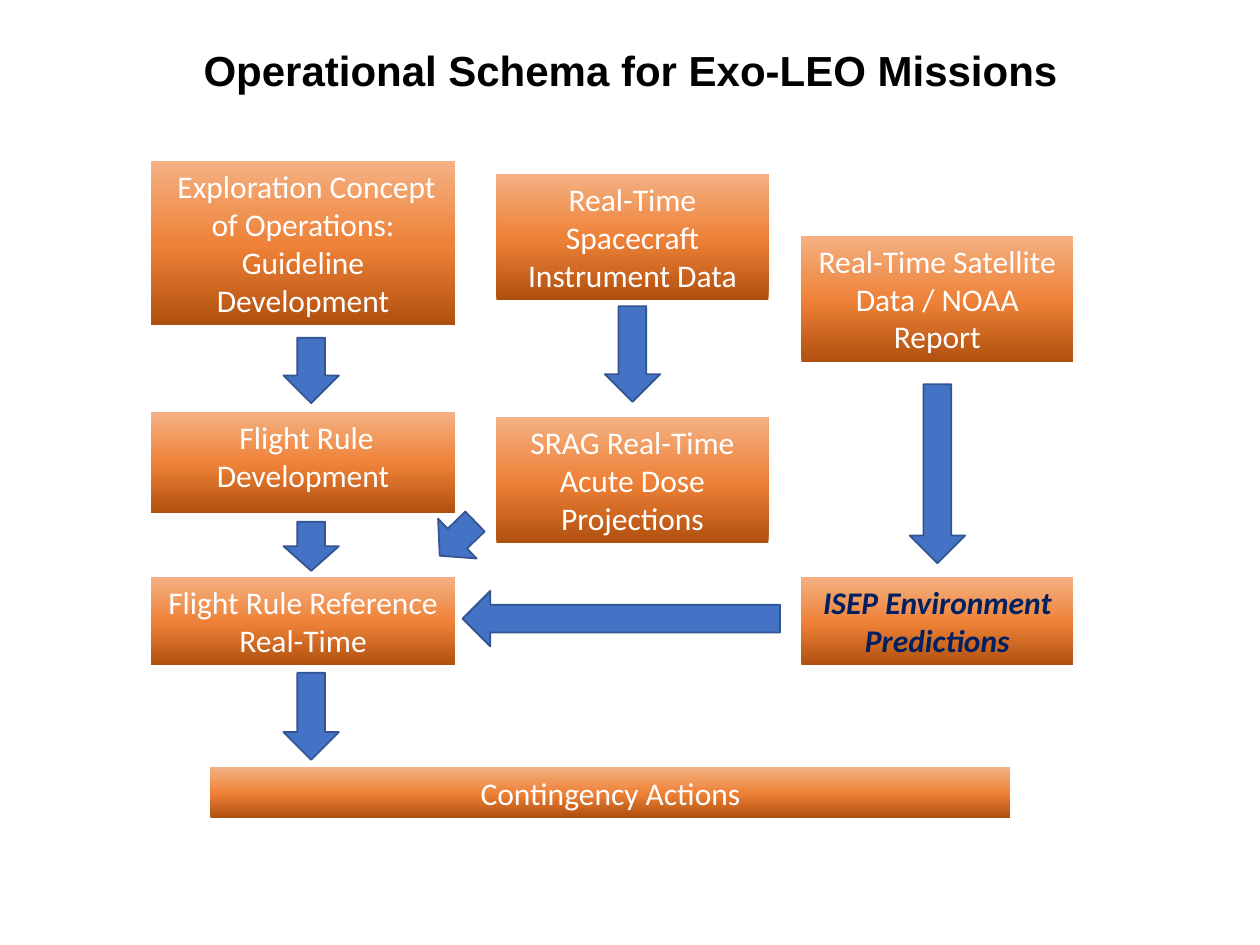
from copy import deepcopy
from typing import NamedTuple

from pptx import Presentation
from pptx.dml.color import RGBColor
from pptx.enum.shapes import MSO_SHAPE
from pptx.enum.text import MSO_ANCHOR, MSO_AUTO_SIZE, PP_ALIGN
from pptx.util import Inches, Pt

RECTANGLE = MSO_SHAPE.RECTANGLE
DOWN_ARROW = MSO_SHAPE.DOWN_ARROW
TOP, MIDDLE = MSO_ANCHOR.TOP, MSO_ANCHOR.MIDDLE
CENTER = PP_ALIGN.CENTER
FIT_TEXT = MSO_AUTO_SIZE.SHAPE_TO_FIT_TEXT

COLORS = {
    "title": "000000",
    "text": "FFFFFF",
    "highlight": "002060",
    "arrow": "4472C4",
    "arrow_line": "325491",
}
BOX_GRADIENT = [(0, "B0500F"), (0.48, "EE8137"), (1, "F4B183")]
ARROW_WIDTH = 0.44

# Column positions and widths
LEFT, LEFT_WIDTH = 1.2, 2.41
CENTRE, RIGHT, DATA_WIDTH = 3.94, 6.36, 2.16
LEFT_ARROW = 2.25


class Box(NamedTuple):
    text: str
    left: float
    top: float
    width: float
    height: float
    highlighted: bool = False


class Arrow(NamedTuple):
    left: float
    top: float
    length: float
    rotation: float = 0


BOXES = [
    Box(" Exploration Concept of Operations: Guideline Development",
        LEFT, 1.28, LEFT_WIDTH, 1.3),
    Box(" Flight Rule Development", LEFT, 3.27, LEFT_WIDTH, 0.8),
    Box("Flight Rule Reference Real-Time", LEFT, 4.58, LEFT_WIDTH, 0.7),
    Box("Real-Time Spacecraft Instrument Data", CENTRE, 1.38, DATA_WIDTH, 1),
    Box("SRAG Real-Time Acute Dose Projections", CENTRE, 3.31, DATA_WIDTH, 1),
    Box("Real-Time Satellite Data / NOAA Report", RIGHT, 1.87, DATA_WIDTH, 1),
    Box("ISEP Environment Predictions", RIGHT, 4.58, DATA_WIDTH, 0.7, True),
    Box("Contingency Actions", 1.67, 6.09, 6.35, 0.4),
]

ARROWS = [
    Arrow(LEFT_ARROW, 2.68, 0.52),
    Arrow(LEFT_ARROW, 4.14, 0.39),
    Arrow(LEFT_ARROW, 5.34, 0.69),
    Arrow(4.8, 2.43, 0.76),
    Arrow(7.22, 3.05, 1.42),
    Arrow(4.71, 3.65, 2.52, 90),
    Arrow(3.41, 4.08, 0.39, 45.9),
]


def rgb(name: str) -> RGBColor:
    return RGBColor.from_string(COLORS[name])


def fill_with_gradient(shape) -> None:
    shape.fill.gradient()
    shape.fill.gradient_angle = 90
    stop_list = shape.fill._fill._gradFill.gsLst
    stop_list.append(deepcopy(stop_list[-1]))
    for stop, (position, color) in zip(shape.fill.gradient_stops, BOX_GRADIENT):
        stop.position = position
        stop.color.rgb = RGBColor.from_string(color)


def add_box(slide, box: Box) -> None:
    shape = slide.shapes.add_shape(
        RECTANGLE, Inches(box.left), Inches(box.top),
        Inches(box.width), Inches(box.height))
    shape.shadow.inherit = False
    shape.line.fill.background()
    fill_with_gradient(shape)

    frame = shape.text_frame
    frame.word_wrap = True
    frame.auto_size = FIT_TEXT
    frame.vertical_anchor = TOP
    paragraph = frame.paragraphs[0]
    paragraph.text = box.text
    paragraph.alignment = CENTER
    font = paragraph.font
    font.name, font.size = "Calibri", Pt(18)
    font.bold = font.italic = box.highlighted
    font.color.rgb = rgb("highlight" if box.highlighted else "text")


def add_arrow(slide, arrow: Arrow) -> None:
    shape = slide.shapes.add_shape(
        DOWN_ARROW, Inches(arrow.left), Inches(arrow.top),
        Inches(ARROW_WIDTH), Inches(arrow.length))
    shape.rotation = arrow.rotation
    shape.shadow.inherit = False
    shape.fill.solid()
    shape.fill.fore_color.rgb = rgb("arrow")
    shape.line.color.rgb = rgb("arrow_line")
    shape.line.width = Pt(1)


def set_title(slide, text: str) -> None:
    title = slide.shapes.title
    title.left, title.top = Inches(1.42), Inches(0.08)
    title.width, title.height = Inches(7.17), Inches(1)
    title.text_frame.vertical_anchor = MIDDLE
    paragraph = title.text_frame.paragraphs[0]
    paragraph.text = text
    paragraph.alignment = CENTER
    paragraph.line_spacing = 0.9
    font = paragraph.font
    font.name, font.size, font.bold = "Arial", Pt(24), True
    font.color.rgb = rgb("title")


def main() -> None:
    presentation = Presentation()
    presentation.slide_width = Inches(10)
    presentation.slide_height = Inches(7.5)
    slide = presentation.slides.add_slide(presentation.slide_layouts[5])

    set_title(slide, "Operational Schema for Exo-LEO Missions")
    # Process steps and data sources
    for box in BOXES:
        add_box(slide, box)
    # Flow between the boxes
    for arrow in ARROWS:
        add_arrow(slide, arrow)

    presentation.save("out.pptx")


if __name__ == "__main__":
    main()
